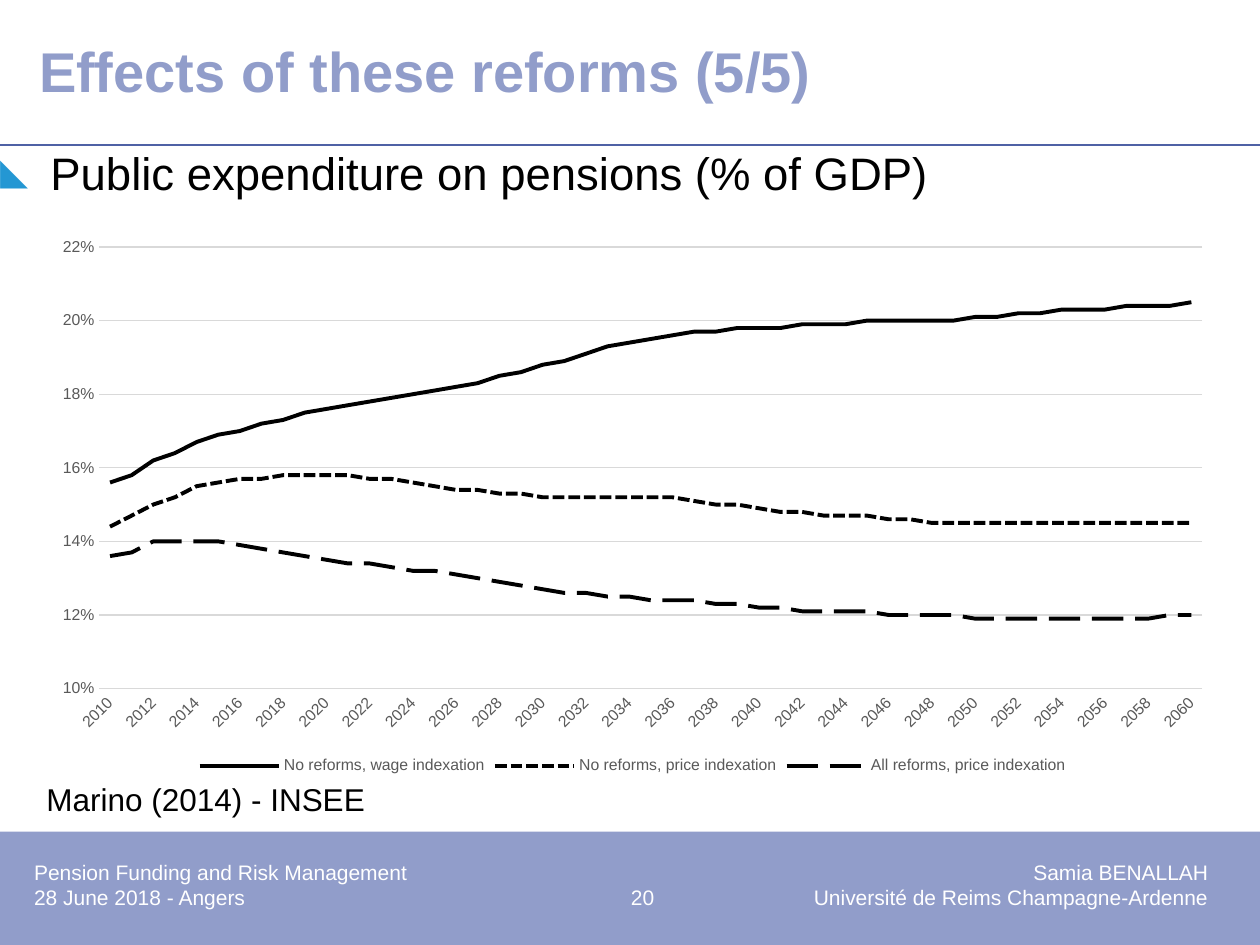
from lxml.etree import SubElement
from pptx import Presentation
from pptx.chart.data import CategoryChartData
from pptx.dml.color import RGBColor
from pptx.enum.chart import XL_CHART_TYPE, XL_LEGEND_POSITION, XL_TICK_MARK
from pptx.enum.dml import MSO_LINE
from pptx.enum.shapes import MSO_CONNECTOR, MSO_SHAPE
from pptx.enum.text import MSO_ANCHOR, MSO_AUTO_SIZE, PP_ALIGN
from pptx.oxml.ns import qn
from pptx.util import Inches, Pt

FACE = "Arial"
BLUE, BLACK, WHITE = "919DCA", "000000", "FFFFFF"
GREY, PALE = "595959", "D9D9D9"

YEARS = range(2010, 2061)
LINES = [
    ("No reforms, wage indexation", MSO_LINE.SOLID, [
        156, 158, 162, 164, 167, 169, 170, 172, 173, 175, 176, 177, 178,
        179, 180, 181, 182, 183, 185, 186, 188, 189, 191, 193, 194, 195,
        196, 197, 197, 198, 198, 198, 199, 199, 199, 200, 200, 200, 200,
        200, 201, 201, 202, 202, 203, 203, 203, 204, 204, 204, 205]),
    ("No reforms, price indexation", MSO_LINE.SQUARE_DOT, [
        144, 147, 150, 152, 155, 156, 157, 157, 158, 158, 158, 158, 157,
        157, 156, 155, 154, 154, 153, 153, 152, 152, 152, 152, 152, 152,
        152, 151, 150, 150, 149, 148, 148, 147, 147, 147, 146, 146, 145,
        145, 145, 145, 145, 145, 145, 145, 145, 145, 145, 145, 145]),
    ("All reforms, price indexation", MSO_LINE.LONG_DASH, [
        136, 137, 140, 140, 140, 140, 139, 138, 137, 136, 135, 134, 134,
        133, 132, 132, 131, 130, 129, 128, 127, 126, 126, 125, 125, 124,
        124, 124, 123, 123, 122, 122, 121, 121, 121, 121, 120, 120, 120,
        120, 119, 119, 119, 119, 119, 119, 119, 119, 119, 120, 120]),
]


def tint(code):
    return RGBColor.from_string(code)


def style(font, size, code, bold=False):
    font.name, font.size, font.bold = FACE, Pt(size), bold
    font.color.rgb = tint(code)


def write(para, text, size, code, bold=False):
    run = para.add_run()
    run.text = text
    style(run.font, size, code, bold)


def place(shape, box):
    shape.left, shape.top, shape.width, shape.height = map(Inches, box)


def frame(shape, inset=0, anchor=MSO_ANCHOR.TOP):
    text = shape.text_frame
    text.word_wrap = True
    text.auto_size = MSO_AUTO_SIZE.NONE
    text.vertical_anchor = anchor
    text.margin_left = text.margin_right = Inches(inset)
    text.margin_top = text.margin_bottom = Inches(inset / 2)
    return text


def add_head(slide, box):
    title = slide.shapes.title
    place(title, box)
    para = frame(title, anchor=MSO_ANCHOR.MIDDLE).paragraphs[0]
    para.alignment = PP_ALIGN.LEFT
    para.line_spacing = 0.85
    write(para, "Effects of these reforms (5/5)", 32, BLUE, True)


def add_rule(slide, left, top, width):
    ends = map(Inches, (left, top, left + width, top))
    rule = slide.shapes.add_connector(MSO_CONNECTOR.STRAIGHT, *ends)
    rule.line.color.rgb = tint("4F61A5")
    rule.line.width = Pt(0.75)
    SubElement(rule._element.spPr, qn("a:effectLst"))


def add_list(slide, box):
    body = slide.placeholders[1]
    place(body, box)
    para = frame(body).paragraphs[0]
    para.space_before = Pt(0)
    props = para._p.get_or_add_pPr()
    props.set("marL", str(Inches(0.4)))
    props.set("indent", str(Inches(-0.4)))
    shade = SubElement(props, qn("a:buClr"))
    SubElement(shade, qn("a:srgbClr"), val="2497D3")
    SubElement(props, qn("a:buSzPct"), val="80000")
    SubElement(props, qn("a:buFont"), typeface=FACE)
    SubElement(props, qn("a:buChar"), char="◣")
    write(para, "Public expenditure on pensions (% of GDP)", 26, BLACK)


def format_axis(axis):
    axis.major_tick_mark = axis.minor_tick_mark = XL_TICK_MARK.NONE
    style(axis.tick_labels.font, 9, GREY)


def add_plot(slide, box):
    data = CategoryChartData(number_format="0.0%")
    data.categories = [str(year) for year in YEARS]
    for name, _, mills in LINES:
        data.add_series(name, [mill / 1000 for mill in mills])
    chart = slide.shapes.add_chart(
        XL_CHART_TYPE.LINE, *map(Inches, box), data).chart
    style(chart.font, 10, BLACK)
    chart.has_title = False
    chart.has_legend = True
    chart.legend.position = XL_LEGEND_POSITION.BOTTOM
    chart.legend.include_in_layout = False
    style(chart.legend.font, 9, GREY)

    years, share = chart.category_axis, chart.value_axis
    format_axis(years)
    years.format.line.color.rgb = tint(PALE)
    years.format.line.width = Pt(0.75)
    node = years._element
    node.find(qn("c:txPr")).find(qn("a:bodyPr")).set("rot", "-2700000")
    skip = SubElement(node, qn("c:tickLblSkip"), val="2")
    node.find(qn("c:noMultiLvlLbl")).addprevious(skip)

    format_axis(share)
    share.minimum_scale, share.maximum_scale = 0.1, 0.22
    share.major_unit = 0.02
    share.tick_labels.number_format = "0%"
    share.tick_labels.number_format_is_linked = False
    share.format.line.fill.background()
    share.major_gridlines.format.line.color.rgb = tint(PALE)
    share.major_gridlines.format.line.width = Pt(0.75)

    chart.plots[0].vary_by_categories = False
    for series, (_, dash, _) in zip(chart.plots[0].series, LINES):
        series.smooth = False
        line = series.format.line
        line.color.rgb = tint(BLACK)
        line.width = Pt(2.25)
        line.dash_style = dash


def add_note(slide, box):
    note = slide.shapes.add_textbox(*map(Inches, box))
    para = frame(note, 0.1).paragraphs[0]
    write(para, "Marino (2014) - INSEE", 18, BLACK)


def add_foot(slide, box):
    left, top, width, height = box
    band = slide.shapes.add_shape(MSO_SHAPE.RECTANGLE, *map(Inches, box))
    band.shadow.inherit = False
    band.fill.solid()
    band.fill.fore_color.rgb = tint(BLUE)
    band.line.fill.background()
    area = (left + 0.27, top + 0.22, width - 0.55, height - 0.38)
    text = frame(slide.shapes.add_textbox(*map(Inches, area)))
    rows = ["Pension Funding and Risk Management\t\tSamia BENALLAH",
            "28 June 2018 - Angers\t20\tUniversité de Reims Champagne-Ardenne"]
    for spot, row in enumerate(rows):
        para = text.add_paragraph() if spot else text.paragraphs[0]
        tabs = SubElement(para._p.get_or_add_pPr(), qn("a:tabLst"))
        for stop, side in ((4.83, "ctr"), (9.32, "r")):
            SubElement(tabs, qn("a:tab"), pos=str(Inches(stop)), algn=side)
        write(para, row, 12, WHITE)


def main():
    deck = Presentation()
    deck.slide_width, deck.slide_height = Inches(10), Inches(7.5)
    slide = deck.slides.add_slide(deck.slide_layouts[1])
    add_foot(slide, (0, 6.6, 10, 0.9))
    add_rule(slide, 0, 1.15, 10)
    add_head(slide, (0.31, 0.2, 9.53, 0.79))
    add_list(slide, (0, 1.15, 10, 5.51))
    add_plot(slide, (0.31, 1.8, 9.42, 4.39))
    add_note(slide, (0.27, 6.14, 9.45, 0.4))
    deck.save("out.pptx")


if __name__ == "__main__":
    main()
